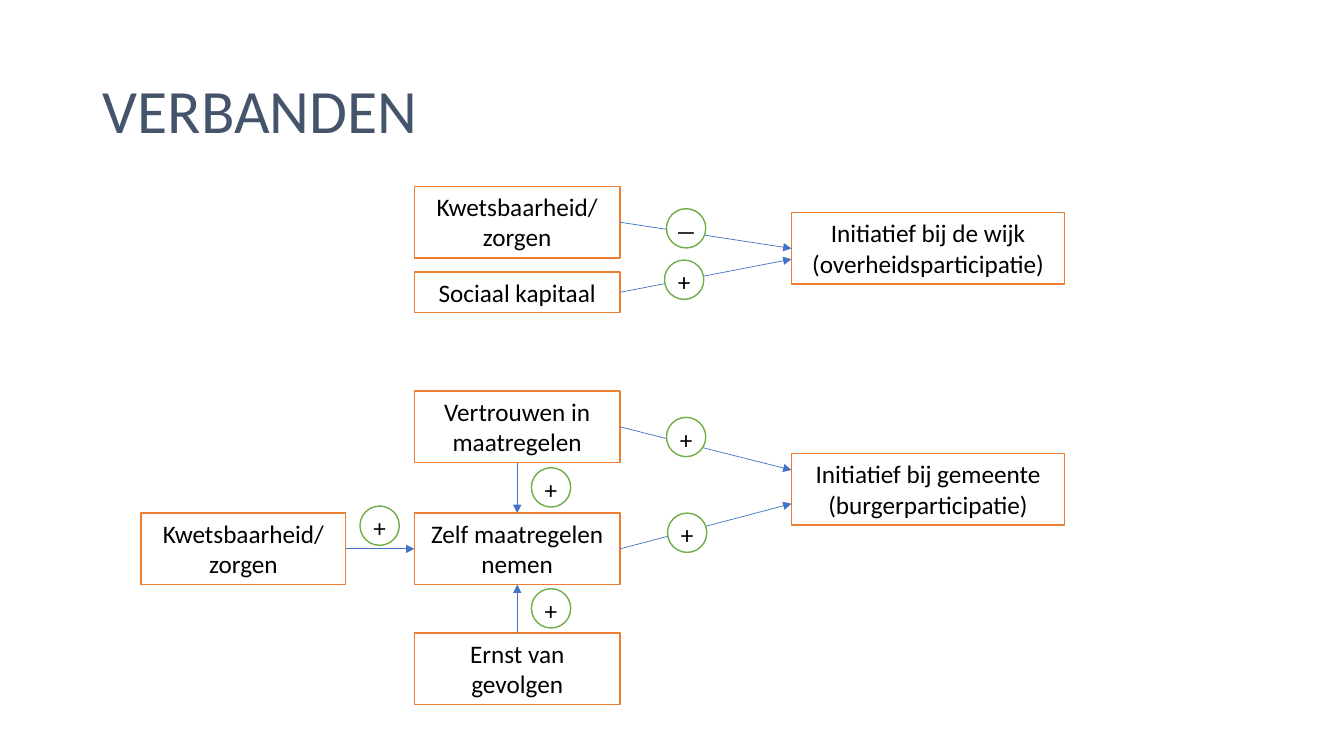
"""Build the slide VERBANDEN: a diagram of signed relations between boxes."""
from lxml import etree
from pptx import Presentation
from pptx.dml.color import RGBColor
from pptx.enum.shapes import MSO_CONNECTOR, MSO_SHAPE
from pptx.enum.text import MSO_ANCHOR, MSO_AUTO_SIZE, PP_ALIGN
from pptx.oxml.ns import qn
from pptx.util import Inches, Pt

RECTANGLE, OVAL = MSO_SHAPE.RECTANGLE, MSO_SHAPE.OVAL
STRAIGHT = MSO_CONNECTOR.STRAIGHT
TOP, MIDDLE = MSO_ANCHOR.TOP, MSO_ANCHOR.MIDDLE
LEFT, CENTER = PP_ALIGN.LEFT, PP_ALIGN.CENTER
GROW, FIXED = MSO_AUTO_SIZE.SHAPE_TO_FIT_TEXT, MSO_AUTO_SIZE.NONE

FONT = "Calibri"
TITLE_COLOR, TEXT_COLOR, WHITE = "44546A", "000000", "FFFFFF"
BOX_COLOR, ARROW_COLOR, SIGN_COLOR = "ED7D31", "4472C4", "70AD47"

TITLE = "VERBANDEN"
TITLE_AREA = (0.92, 0.4, 11.5, 1.45)
COLUMNS = {"cause": (1.4, 2.03), "factor": (4.11, 2.04), "outcome": (7.85, 2.71)}
ONE_LINE, TWO_LINES = 0.4, 0.71
SIGN_SIZE = 0.39

# box: column, top, height, paragraphs
BOXES = {
    "wijk": ("outcome", 2.11, TWO_LINES, ["Initiatief bij de wijk", "(overheidsparticipatie)"]),
    "gemeente": ("outcome", 4.5, TWO_LINES, ["Initiatief bij gemeente", "(burgerparticipatie)"]),
    "zorgen wijk": ("factor", 1.85, TWO_LINES, ["Kwetsbaarheid/", "zorgen"]),
    "kapitaal": ("factor", 2.7, ONE_LINE, ["Sociaal kapitaal"]),
    "vertrouwen": ("factor", 3.88, TWO_LINES, ["Vertrouwen in maatregelen"]),
    "maatregelen": ("factor", 5.09, TWO_LINES, ["Zelf maatregelen nemen"]),
    "ernst": ("factor", 6.28, TWO_LINES, ["Ernst van gevolgen"]),
    "zorgen": ("cause", 5.09, TWO_LINES, ["Kwetsbaarheid/", "zorgen"]),
}

RIGHT_SIDE, LEFT_SIDE = (1, 0.5), (0, 0.5)
TOP_SIDE, BOTTOM_SIDE = (0.5, 0), (0.5, 1)

# relation: from box, its side, to box, its side, sign, left and top of the sign
RELATIONS = [
    ("zorgen wijk", RIGHT_SIDE, "wijk", (0, 0.5), "―", 6.61, 2.07),
    ("kapitaal", RIGHT_SIDE, "wijk", (0, 0.65), "+", 6.59, 2.58),
    ("vertrouwen", RIGHT_SIDE, "gemeente", (0, 0.23), "+", 6.61, 4.14),
    ("maatregelen", RIGHT_SIDE, "gemeente", (0, 0.7), "+", 6.62, 5.09),
    ("vertrouwen", BOTTOM_SIDE, "maatregelen", TOP_SIDE, "+", 5.27, 4.64),
    ("ernst", TOP_SIDE, "maatregelen", BOTTOM_SIDE, "+", 5.27, 5.84),
    ("zorgen", RIGHT_SIDE, "maatregelen", LEFT_SIDE, "+", 3.57, 5.02),
]


def rgb(color):
    return RGBColor.from_string(color)


def write(frame, paragraphs, size, color, align):
    for index, text in enumerate(paragraphs):
        paragraph = frame.add_paragraph() if index else frame.paragraphs[0]
        paragraph.alignment = align
        run = paragraph.add_run()
        run.text = text
        run.font.name, run.font.size = FONT, Pt(size)
        run.font.color.rgb = rgb(color)


def add_outlined(slide, preset, area, color, paragraphs):
    shape = slide.shapes.add_shape(preset, *map(Inches, area))
    shape.shadow.inherit = False
    shape.fill.solid()
    shape.fill.fore_color.rgb = rgb(WHITE)
    shape.line.color.rgb = rgb(color)
    shape.line.width = Pt(1)
    write(shape.text_frame, paragraphs, 18, TEXT_COLOR, CENTER)
    return shape.text_frame


def add_box(slide, area, paragraphs):
    frame = add_outlined(slide, RECTANGLE, area, BOX_COLOR, paragraphs)
    frame.vertical_anchor = TOP
    frame.word_wrap = True
    frame.auto_size = GROW


def add_sign(slide, left, top, sign):
    area = (left, top, SIGN_SIZE, SIGN_SIZE)
    frame = add_outlined(slide, OVAL, area, SIGN_COLOR, [sign])
    frame.margin_left = frame.margin_right = frame.margin_bottom = 0
    frame.margin_top = Inches(0.04)
    frame.vertical_anchor = MIDDLE
    frame.word_wrap = False


def add_arrow(slide, start, end):
    arrow = slide.shapes.add_connector(STRAIGHT, *map(Inches, start + end))
    arrow.line.color.rgb = rgb(ARROW_COLOR)
    arrow.line.width = Pt(0.5)
    etree.SubElement(arrow.line._get_or_add_ln(), qn("a:tailEnd"), type="triangle")
    etree.SubElement(arrow._element.spPr, qn("a:effectLst"))


def add_title(slide):
    title = slide.shapes.title
    title.left, title.top, title.width, title.height = map(Inches, TITLE_AREA)
    frame = title.text_frame
    frame.auto_size = FIXED
    frame.vertical_anchor = MIDDLE
    write(frame, [TITLE], 44, TITLE_COLOR, LEFT)
    frame.paragraphs[0].line_spacing = 0.9


def side_point(area, side):
    left, top, width, height = area
    return left + width * side[0], top + height * side[1]


def main():
    deck = Presentation()
    deck.slide_width, deck.slide_height = Inches(13.33), Inches(7.5)
    slide = deck.slides.add_slide(deck.slide_layouts[5])
    add_title(slide)
    areas = {}
    for name, (column, top, height, paragraphs) in BOXES.items():
        left, width = COLUMNS[column]
        areas[name] = (left, top, width, height)
        add_box(slide, areas[name], paragraphs)
    for source, source_side, target, target_side, sign, left, top in RELATIONS:
        start = side_point(areas[source], source_side)
        end = side_point(areas[target], target_side)
        add_arrow(slide, start, end)
        add_sign(slide, left, top, sign)
    deck.save("out.pptx")


if __name__ == "__main__":
    main()
